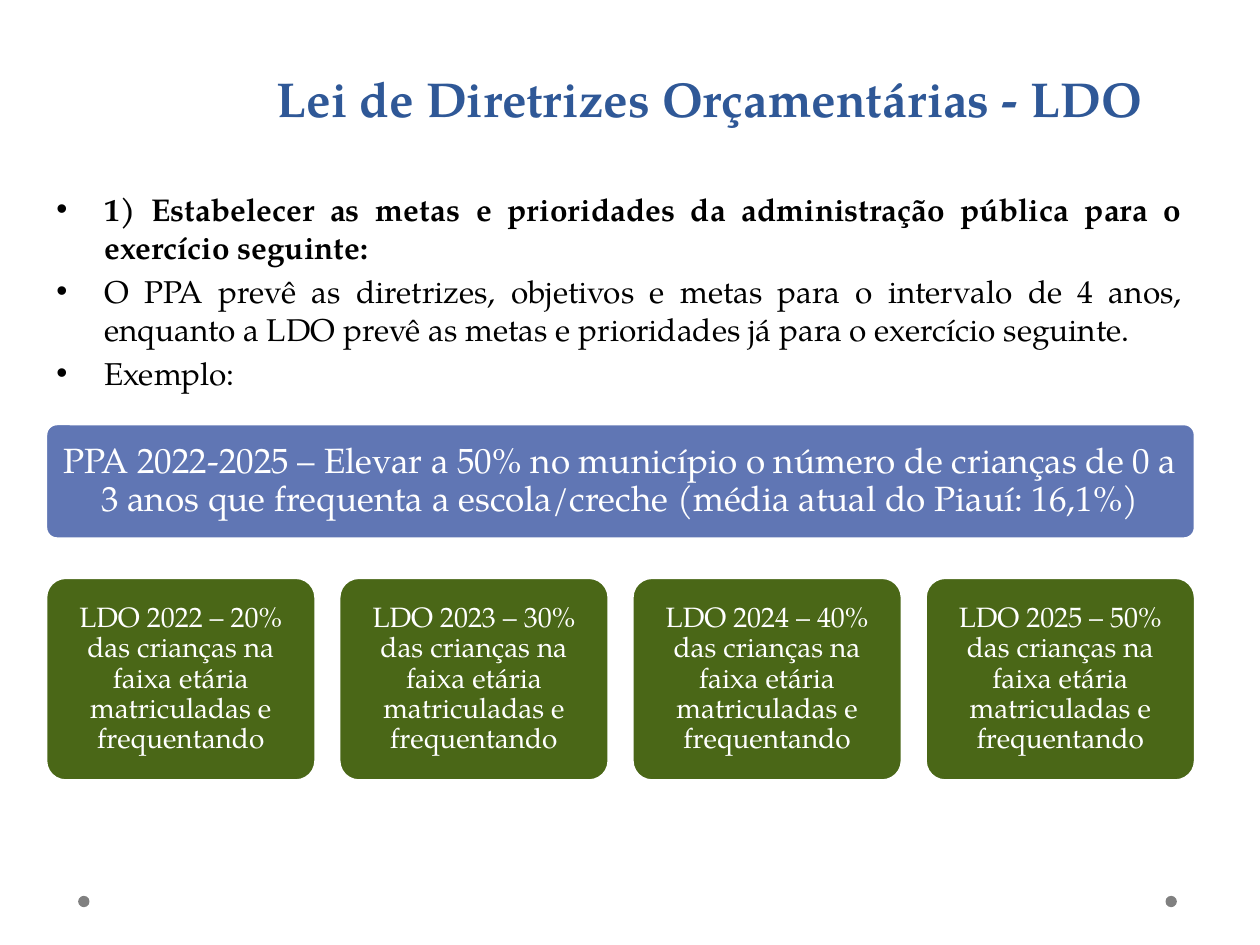
from dataclasses import dataclass

from lxml.etree import SubElement
from pptx import Presentation
from pptx.dml.color import RGBColor
from pptx.enum.shapes import MSO_SHAPE
from pptx.enum.text import MSO_ANCHOR, MSO_AUTO_SIZE, PP_ALIGN
from pptx.oxml.ns import qn
from pptx.util import Inches, Pt

FONT = "TeX Gyre Pagella"
COLORS = {
    "title": "2F5897",
    "body": "000000",
    "white": "FFFFFF",
    "goal": "6076B4",
    "year": "4A6717",
    "dot": "808080",
}

# Grid in inches: four equal columns across the content width
GRID_LEFT, GRID_WIDTH = 0.36, 9.13
COLUMNS, COLUMN_WIDTH = 4, 2.15
COLUMN_STEP = (GRID_WIDTH - COLUMN_WIDTH) / (COLUMNS - 1)
DOT_TOP, DOT_SIZE = 7.11, 0.09
INDENT = 0.38

BULLETS = [
    ("1) Estabelecer as metas e prioridades da administração pública "
     "para o exercício seguinte:", True),
    ("O PPA prevê as diretrizes, objetivos e metas para o intervalo de 4 anos, "
     "enquanto a LDO prevê as metas e prioridades já para o exercício seguinte.", False),
    ("Exemplo:", False),
]
GOAL = ("PPA 2022-2025 – Elevar a 50% no município o número de crianças de 0 a 3 anos "
        "que frequenta a escola/creche (média atual do Piauí: 16,1%)")
YEAR_TARGETS = [(2022, 20), (2023, 30), (2024, 40), (2025, 50)]


@dataclass
class Card:
    text: str
    column: int
    span: int
    top: float
    height: float
    color: str
    size: int
    inset: float

    @property
    def left(self) -> float:
        return GRID_LEFT + self.column * COLUMN_STEP

    @property
    def width(self) -> float:
        return (self.span - 1) * COLUMN_STEP + COLUMN_WIDTH


def rgb(name: str) -> RGBColor:
    return RGBColor.from_string(COLORS[name])


def add_span(para, text: str, size: int, color: str, bold: bool = False) -> None:
    span = para.add_run()
    span.text = text
    span.font.name = FONT
    span.font.size = Pt(size)
    span.font.bold = bold
    span.font.color.rgb = rgb(color)


def write_title(title) -> None:
    title.left, title.top = Inches(1.85), Inches(0.13)
    title.width, title.height = Inches(7.56), Inches(0.93)
    frame = title.text_frame
    frame.auto_size = MSO_AUTO_SIZE.NONE
    frame.vertical_anchor = MSO_ANCHOR.BOTTOM
    para = frame.paragraphs[0]
    para.alignment = PP_ALIGN.CENTER
    para.line_spacing = Pt(58)
    add_span(para, "Lei de Diretrizes Orçamentárias - LDO", 28, "title", True)


def set_bullet(para) -> None:
    """Give the paragraph a round bullet with a hanging indent."""
    properties = para._p.get_or_add_pPr()
    properties.set("marL", str(Inches(INDENT)))
    properties.set("indent", str(-Inches(INDENT)))
    SubElement(properties, qn("a:buFont")).set("typeface", "Arial")
    SubElement(properties, qn("a:buChar")).set("char", "•")


def add_bullets(slide) -> None:
    box = slide.shapes.add_textbox(Inches(0.35), Inches(1.46), Inches(9.13), Inches(1.82))
    frame = box.text_frame
    frame.word_wrap = True
    for index, (text, bold) in enumerate(BULLETS):
        para = frame.add_paragraph() if index else frame.paragraphs[0]
        set_bullet(para)
        para.alignment = PP_ALIGN.JUSTIFY
        if index:
            para.space_before = Pt(3.6)
        add_span(para, text, 18, "body", bold)


def add_card(slide, card: Card) -> None:
    shape = slide.shapes.add_shape(
        MSO_SHAPE.ROUNDED_RECTANGLE,
        Inches(card.left), Inches(card.top), Inches(card.width), Inches(card.height))
    shape.adjustments[0] = 0.1
    shape.shadow.inherit = False
    shape.fill.solid()
    shape.fill.fore_color.rgb = rgb(card.color)
    shape.line.color.rgb = rgb("white")
    shape.line.width = Pt(2.25)
    frame = shape.text_frame
    frame.word_wrap = True
    frame.vertical_anchor = MSO_ANCHOR.MIDDLE
    frame.margin_left = frame.margin_right = Inches(card.inset)
    frame.margin_top = frame.margin_bottom = Inches(card.inset)
    para = frame.paragraphs[0]
    para.alignment = PP_ALIGN.CENTER
    para.line_spacing = 0.9
    add_span(para, card.text, card.size, "white")


def add_dot(slide, left: float) -> None:
    dot = slide.shapes.add_shape(
        MSO_SHAPE.OVAL, Inches(left), Inches(DOT_TOP), Inches(DOT_SIZE), Inches(DOT_SIZE))
    dot.shadow.inherit = False
    dot.fill.solid()
    dot.fill.fore_color.rgb = rgb("dot")
    dot.line.fill.background()


def main() -> None:
    deck = Presentation()
    deck.slide_width, deck.slide_height = Inches(10), Inches(7.5)
    slide = deck.slides.add_slide(deck.slide_layouts[5])
    for left in (9.25, 0.62):
        add_dot(slide, left)
    write_title(slide.shapes.title)
    add_bullets(slide)
    add_card(slide, Card(GOAL, 0, COLUMNS, 3.36, 0.92, "goal", 20, 0.08))
    for column, (year, percent) in enumerate(YEAR_TARGETS):
        text = f"LDO {year} – {percent}% das crianças na faixa etária matriculadas e frequentando"
        add_card(slide, Card(text, column, 1, 4.58, 1.62, "year", 16, 0.07))
    deck.save("out.pptx")


if __name__ == "__main__":
    main()
